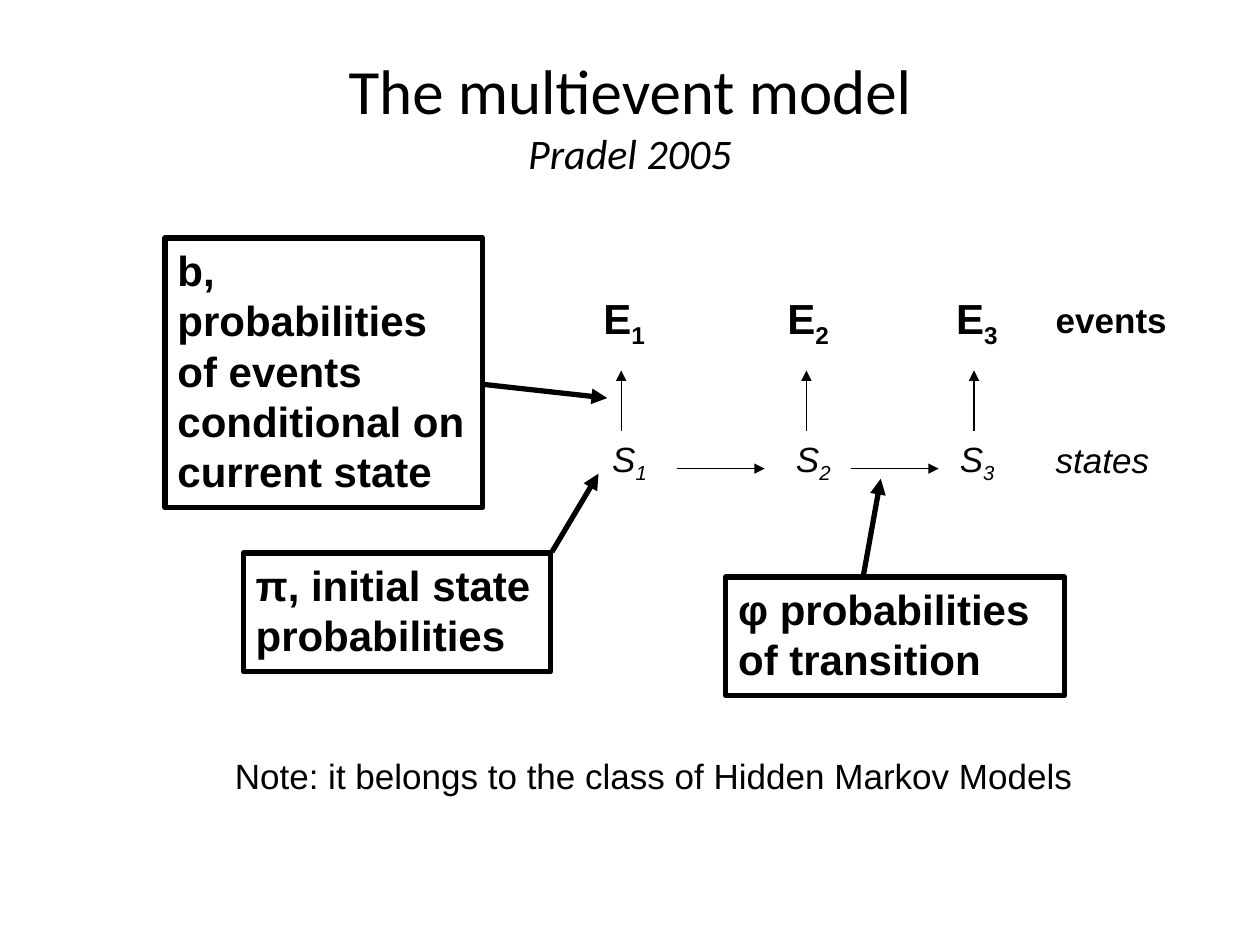
from lxml import etree
from pptx import Presentation
from pptx.dml.color import RGBColor
from pptx.enum.shapes import MSO_CONNECTOR, MSO_SHAPE
from pptx.enum.text import MSO_ANCHOR, PP_ALIGN
from pptx.oxml.ns import qn
from pptx.util import Pt

LEFT, CENTER = PP_ALIGN.LEFT, PP_ALIGN.CENTER
TOP, MIDDLE = MSO_ANCHOR.TOP, MSO_ANCHOR.MIDDLE
STRAIGHT, RECTANGLE = MSO_CONNECTOR.STRAIGHT, MSO_SHAPE.RECTANGLE
BLACK = RGBColor(0x00, 0x00, 0x00)
THIN, THICK = 0.75, 3

TITLE, CITATION = "The multievent model", "Pradel 2005"
TITLE_PLACE = (54, 31.7, 612, 67.7)

# index, left of event, left of state, x of the upward arrow
STEPS = [
    ("1", 337.7, 342.7, 355),
    ("2", 442.8, 447.8, 460.8),
    ("3", 539.3, 541.4, 556.6),
]
EVENT_TOP, STATE_TOP = 163.4, 246.2
ARROW_BOTTOM, ARROW_TOP = 246.2, 211.7
TRANSITION_Y, TRANSITION_LENGTH = 267.8, 50.4
TRANSITION_STARTS = [386.6, 486]

# text, place of the box, start and end of its arrow
CALLOUTS = [
    ("b, probabilities of events conditional on current state",
     (94.3, 136.1, 181.4, 154.1), (275.8, 219.6), (347, 227.5)),
    ("π, initial state probabilities",
     (139, 316.1, 175.7, 67.7), (315.4, 315.4), (342, 270.7)),
    ("φ probabilities of transition",
     (414.7, 329.8, 193.7, 67.7), (493.2, 329.8), (503.3, 273.6)),
]

# text, place, bold, italic, alignment
LABELS = [
    ("events", (596.2, 167, 84.2, 31.7), True, False, LEFT),
    ("states", (596.2, 247, 84.2, 31.7), False, True, LEFT),
    ("Note: it belongs to the class of Hidden Markov Models",
     (78.5, 427.7, 590.4, 31.7), False, False, CENTER),
]


def points(values):
    return [Pt(value) for value in values]


def add_span(para, text, size, bold=False, italic=False, name="Arial"):
    span = para.add_run()
    span.text = text
    font = span.font
    font.name, font.size, font.bold, font.italic = name, Pt(size), bold, italic
    font.color.rgb = BLACK
    return span


def add_text(page, place, align=LEFT):
    """Add an empty text box and return its paragraph."""
    frame = page.shapes.add_textbox(*points(place)).text_frame
    frame.word_wrap = True
    para = frame.paragraphs[0]
    para.alignment = align
    return para


def add_symbol(page, letter, index, place, size, **style):
    """Add a letter with a subscript index."""
    para = add_text(page, place)
    add_span(para, letter, size, **style)
    subscript = add_span(para, index, size, **style)
    subscript.font._element.set("baseline", "-25000")


def add_arrow(page, start, end, width):
    arrow = page.shapes.add_connector(STRAIGHT, *points(start + end))
    arrow.line.color.rgb = BLACK
    arrow.line.width = Pt(width)
    etree.SubElement(arrow.line._get_or_add_ln(), qn("a:tailEnd"), type="triangle")
    etree.SubElement(arrow._element.spPr, qn("a:effectLst"))


def add_callout(page, text, place):
    box = page.shapes.add_shape(RECTANGLE, *points(place))
    box.shadow.inherit = False
    box.fill.background()
    box.line.color.rgb = BLACK
    box.line.width = Pt(THICK)
    frame = box.text_frame
    frame.word_wrap = True
    frame.vertical_anchor = TOP
    para = frame.paragraphs[0]
    para.alignment = LEFT
    add_span(para, text, 24, bold=True)


def add_title(page):
    title = page.shapes.title
    title.left, title.top, title.width, title.height = points(TITLE_PLACE)
    title.text_frame.vertical_anchor = MIDDLE
    para = title.text_frame.paragraphs[0]
    para.alignment = CENTER
    add_span(para, TITLE, 36, name="Calibri")
    para.add_line_break()
    add_span(para, CITATION, 24, italic=True, name="Calibri")


def main():
    deck = Presentation()
    deck.slide_width, deck.slide_height = Pt(720), Pt(540)
    page = deck.slides.add_slide(deck.slide_layouts[5])
    add_title(page)

    for index, event_left, state_left, arrow_x in STEPS:
        add_symbol(page, "E", index, (event_left, EVENT_TOP, 60, 36), 24, bold=True)
        add_symbol(page, "S", index, (state_left, STATE_TOP, 50, 31), 20, italic=True)
        add_arrow(page, (arrow_x, ARROW_BOTTOM), (arrow_x, ARROW_TOP), THIN)
    for x in TRANSITION_STARTS:
        add_arrow(page, (x, TRANSITION_Y), (x + TRANSITION_LENGTH, TRANSITION_Y), THIN)

    for text, place, start, end in CALLOUTS:
        add_callout(page, text, place)
        add_arrow(page, start, end, THICK)
    for text, place, bold, italic, align in LABELS:
        add_span(add_text(page, place, align), text, 20, bold, italic)

    deck.save("out.pptx")


if __name__ == "__main__":
    main()
